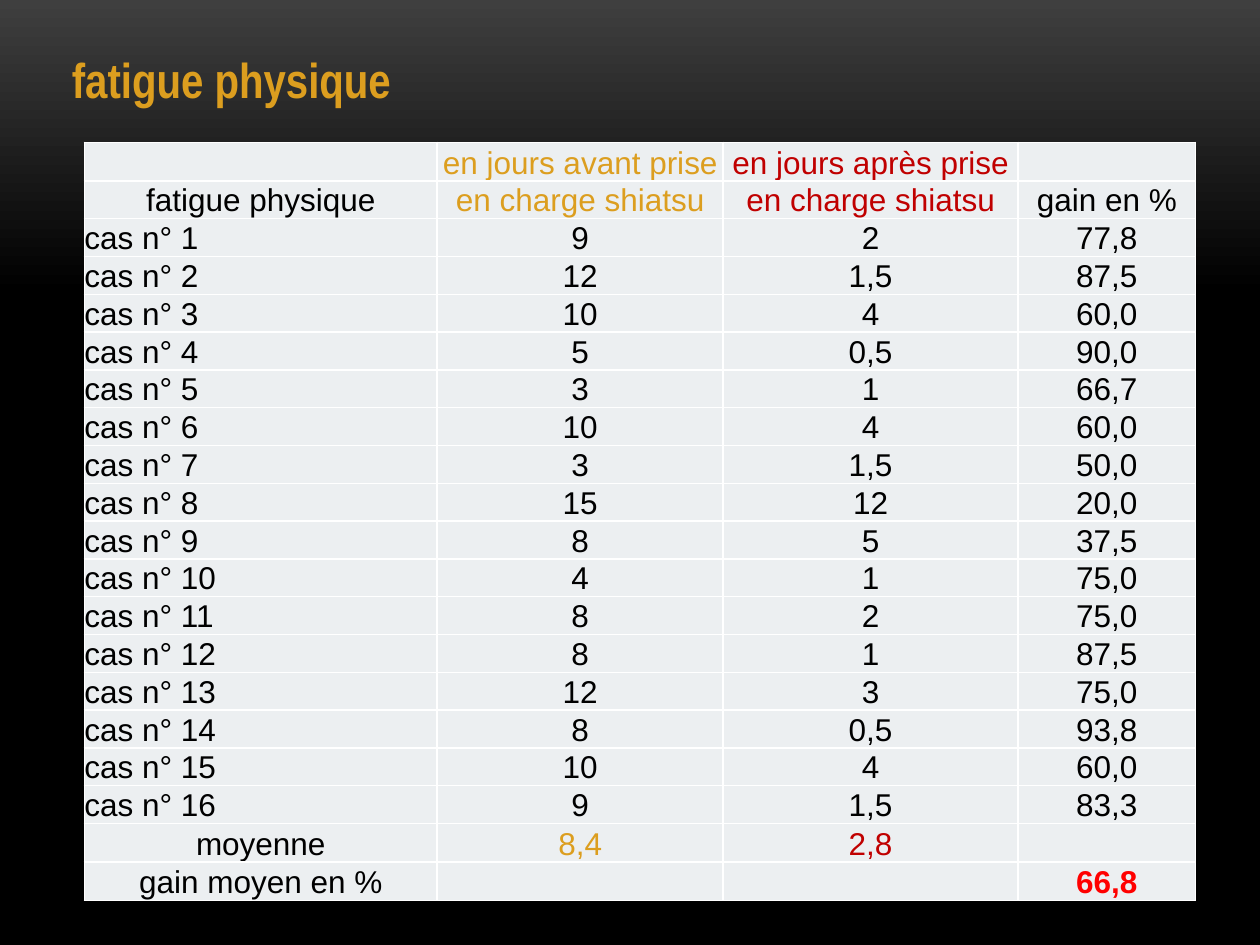
from lxml.etree import SubElement
from pptx import Presentation
from pptx.dml.color import RGBColor
from pptx.enum.text import MSO_ANCHOR, MSO_AUTO_SIZE, PP_ALIGN
from pptx.oxml.ns import qn
from pptx.util import Inches, Pt

GOLD = RGBColor(0xDC, 0x9E, 0x1F)
CRIMSON = RGBColor(0xC0, 0x00, 0x00)
RED = RGBColor(0xFF, 0x00, 0x00)
BLACK = RGBColor(0x00, 0x00, 0x00)
GREY = RGBColor(0x3F, 0x3F, 0x3F)
PALE = RGBColor(0xEC, 0xEF, 0xF1)
WHITE = RGBColor(0xFF, 0xFF, 0xFF)

WIDTHS = (2.8, 2.27, 2.34, 1.41)
HEIGHT = 0.3
HEAD = [
    ("", "en jours avant prise", "en jours après prise", ""),
    ("fatigue physique", "en charge shiatsu", "en charge shiatsu", "gain en %"),
]
CASES = [
    ("9", "2", "77,8"),
    ("12", "1,5", "87,5"),
    ("10", "4", "60,0"),
    ("5", "0,5", "90,0"),
    ("3", "1", "66,7"),
    ("10", "4", "60,0"),
    ("3", "1,5", "50,0"),
    ("15", "12", "20,0"),
    ("8", "5", "37,5"),
    ("4", "1", "75,0"),
    ("8", "2", "75,0"),
    ("8", "1", "87,5"),
    ("12", "3", "75,0"),
    ("8", "0,5", "93,8"),
    ("10", "4", "60,0"),
    ("9", "1,5", "83,3"),
]
FOOT = [
    ("moyenne", "8,4", "2,8", ""),
    ("gain moyen en %", "", "", "66,8"),
]
TINTS = (BLACK, GOLD, CRIMSON, BLACK)
CELL = {
    "margin_left": 0,
    "margin_right": 0,
    "margin_top": 0,
    "margin_bottom": 0,
    "vertical_anchor": MSO_ANCHOR.BOTTOM,
}
PLAIN = {"name": "Arial", "size": Pt(18), "bold": False}
BOLD = {**PLAIN, "bold": True}
TITLE = {"name": "Arial Narrow", "size": Pt(28), "bold": True}
PLACE = {
    "left": Inches(-0.03),
    "top": Inches(0.13),
    "width": Inches(5.17),
    "height": Inches(1),
}
FRAME = {
    "word_wrap": True,
    "auto_size": MSO_AUTO_SIZE.NONE,
    "vertical_anchor": MSO_ANCHOR.MIDDLE,
}


def apply(target, values):
    """Set each named attribute on the target."""
    for name, value in values.items():
        setattr(target, name, value)


def write(para, text, look, color, align):
    """Fill a paragraph with one formatted run."""
    para.alignment = align
    run = para.add_run()
    run.text = text
    apply(run.font, look)
    run.font.color.rgb = color


def paint(slide):
    """Shade the background from grey down to black."""
    fill = slide.background.fill
    fill.gradient()
    fill.gradient_angle = 270
    for stop, place, color in zip(fill.gradient_stops, (0, 0.31), (GREY, BLACK)):
        stop.position = place
        stop.color.rgb = color


def add_title(slide, text):
    """Place and format the slide title."""
    title = slide.shapes.title
    apply(title, PLACE)
    frame = title.text_frame
    apply(frame, FRAME)
    para = frame.paragraphs[0]
    write(para, text, TITLE, GOLD, PP_ALIGN.LEFT)
    props = para._p.get_or_add_pPr()
    props.set("marL", str(Inches(0.5)))
    props.set("indent", "0")


def edge(cell):
    """Draw thin white borders round a cell."""
    props = cell._tc.get_or_add_tcPr()
    for side in ("a:lnL", "a:lnR", "a:lnT", "a:lnB"):
        line = SubElement(props, qn(side), w=str(Pt(1)))
        fill = SubElement(line, qn("a:solidFill"))
        SubElement(fill, qn("a:srgbClr"), val=str(WHITE))


def fill_cell(cell, text, look, color, align):
    """Format a cell and write its text."""
    apply(cell, CELL)
    edge(cell)
    cell.fill.solid()
    cell.fill.fore_color.rgb = PALE
    para = cell.text_frame.paragraphs[0]
    para.font.size = Pt(18)
    if text:
        write(para, text, look, color, align)


def add_grid(slide):
    """Build the table of cases with its head and foot."""
    cases = [(f"cas n° {n}", *vals) for n, vals in enumerate(CASES, 1)]
    rows = HEAD + cases + FOOT
    shape = slide.shapes.add_table(
        len(rows), len(WIDTHS), Inches(0.67), Inches(1.13),
        Inches(sum(WIDTHS)), Inches(HEIGHT * len(rows)),
    )
    table = shape.table
    apply(table, {"first_row": False, "horz_banding": False})
    for col, width in zip(table.columns, WIDTHS):
        col.width = Inches(width)
    for r, row in enumerate(rows):
        table.rows[r].height = Inches(HEIGHT)
        body = row in cases
        last = r == len(rows) - 1
        for c, text in enumerate(row):
            color = BLACK if body else TINTS[c]
            look = PLAIN
            if last and c == 3:
                color, look = RED, BOLD
            align = PP_ALIGN.LEFT if body and c == 0 else PP_ALIGN.CENTER
            fill_cell(table.cell(r, c), text, look, color, align)


def main():
    """Create the slide and save it."""
    deck = Presentation()
    apply(deck, {"slide_width": Inches(10), "slide_height": Inches(7.5)})
    slide = deck.slides.add_slide(deck.slide_layouts[5])
    paint(slide)
    add_title(slide, "fatigue physique")
    add_grid(slide)
    deck.save("out.pptx")


if __name__ == "__main__":
    main()
